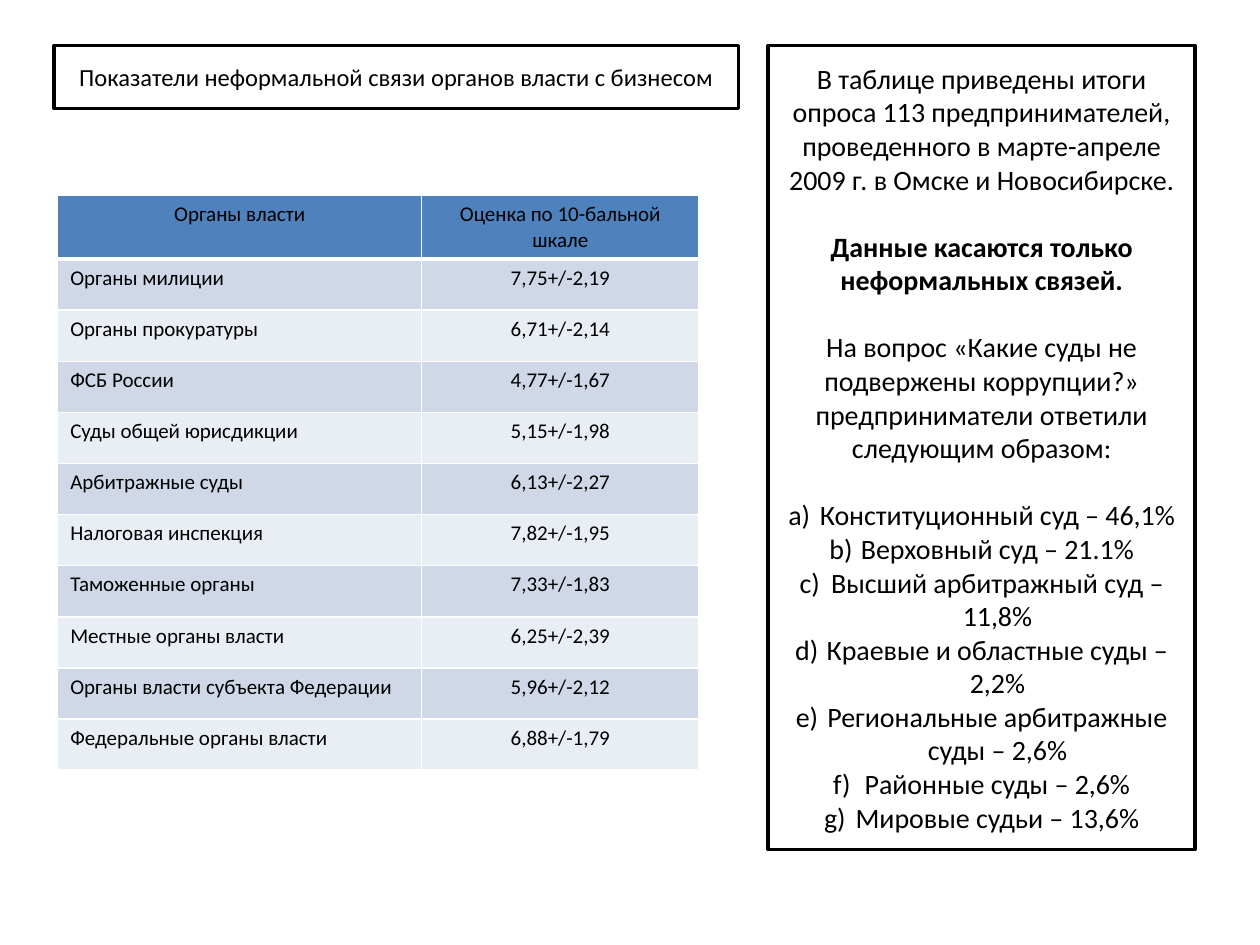
from dataclasses import dataclass

from lxml.etree import SubElement
from pptx import Presentation
from pptx.dml.color import RGBColor
from pptx.enum.shapes import MSO_SHAPE
from pptx.enum.text import MSO_ANCHOR, PP_ALIGN
from pptx.oxml.ns import qn
from pptx.util import Pt


@dataclass(frozen=True)
class Theme:
    font: str = "Calibri"
    ink: str = "000000"
    paper: str = "FFFFFF"
    head: str = "4F81BD"
    bands: tuple = ("D0D8E8", "E9EDF4")
    title: int = 14
    body: int = 16
    cell: int = 12
    edge: int = 2


HEAD = ("Органы власти", "Оценка по 10-бальной шкале")
SCORES = [
    ("Органы милиции", "7,75+/-2,19"),
    ("Органы прокуратуры", "6,71+/-2,14"),
    ("ФСБ России", "4,77+/-1,67"),
    ("Суды общей юрисдикции", "5,15+/-1,98"),
    ("Арбитражные суды", "6,13+/-2,27"),
    ("Налоговая инспекция", "7,82+/-1,95"),
    ("Таможенные органы", "7,33+/-1,83"),
    ("Местные органы власти", "6,25+/-2,39"),
    ("Органы власти субъекта Федерации", "5,96+/-2,12"),
    ("Федеральные органы власти", "6,88+/-1,79"),
]
SURVEY = (
    "В таблице приведены итоги опроса 113 предпринимателей, "
    "проведенного в марте-апреле 2009 г. в Омске и Новосибирске."
)
SCOPE = "Данные касаются только неформальных связей."
QUERY = (
    "На вопрос «Какие суды не подвержены коррупции?» "
    "предприниматели ответили следующим образом:"
)
COURTS = [
    "Конституционный суд – 46,1%",
    "Верховный суд – 21.1%",
    "Высший арбитражный суд – 11,8%",
    "Краевые и областные суды – 2,2%",
    "Региональные арбитражные суды – 2,6%",
    "Районные суды – 2,6%",
    "Мировые судьи – 13,6%",
]


def color(code):
    return RGBColor.from_string(code)


def write(para, text, *, theme, size, bold=False, align=PP_ALIGN.CENTER,
          before=0, letter=False):
    """Fill a paragraph; letter=True numbers it a), b), c)."""
    para.alignment = align
    para.space_before = Pt(before)
    run = para.add_run()
    run.text = text
    font = run.font
    font.name, font.size, font.bold = theme.font, Pt(size), bold
    font.color.rgb = color(theme.ink)
    if letter:
        props = para._p.get_or_add_pPr()
        props.set("marL", str(Pt(18)))
        props.set("indent", str(-Pt(18)))
        SubElement(props, qn("a:buFont"), typeface="+mj-lt")
        SubElement(props, qn("a:buAutoNum"), type="alphaLcParenR")


def rule(cell, code, base):
    """Draw the four borders of a cell; call before filling it."""
    props = cell._tc.get_or_add_tcPr()
    for side, width in (("L", 1), ("R", 1), ("T", 1), ("B", base)):
        line = SubElement(props, qn(f"a:ln{side}"), w=str(Pt(width)))
        fill = SubElement(line, qn("a:solidFill"))
        SubElement(fill, qn("a:srgbClr"), val=code)


class Page:
    def __init__(self, slide, theme):
        self.slide, self.theme = slide, theme

    def box(self, left, top, width, height, paras):
        """Add a framed box; paras holds (text, format) pairs."""
        shape = self.slide.shapes.add_shape(
            MSO_SHAPE.RECTANGLE, Pt(left), Pt(top), Pt(width), Pt(height))
        shape.shadow.inherit = False
        shape.fill.solid()
        shape.fill.fore_color.rgb = color(self.theme.paper)
        shape.line.color.rgb = color(self.theme.ink)
        shape.line.width = Pt(self.theme.edge)
        frame = shape.text_frame
        frame.word_wrap = True
        frame.vertical_anchor = MSO_ANCHOR.MIDDLE
        for i, (text, style) in enumerate(paras):
            para = frame.add_paragraph() if i else frame.paragraphs[0]
            write(para, text, theme=self.theme, **style)

    def table(self, left, top, widths, heights, rows):
        grid = self.slide.shapes.add_table(
            len(rows), len(widths), Pt(left), Pt(top),
            Pt(sum(widths)), Pt(sum(heights))).table
        for col, width in zip(grid.columns, widths):
            col.width = Pt(width)
        for r, row in enumerate(rows):
            grid.rows[r].height = Pt(heights[r])
            shade = self.theme.bands[(r - 1) % 2] if r else self.theme.head
            for c, text in enumerate(row):
                cell = grid.cell(r, c)
                rule(cell, self.theme.paper, base=1 if r else 3)
                cell.fill.solid()
                cell.fill.fore_color.rgb = color(shade)
                align = PP_ALIGN.LEFT if r and not c else PP_ALIGN.CENTER
                write(cell.text_frame.paragraphs[0], text, theme=self.theme,
                      size=self.theme.cell, align=align)


def main():
    deck = Presentation()
    deck.slide_width, deck.slide_height = Pt(720), Pt(540)
    theme = Theme()
    page = Page(deck.slides.add_slide(deck.slide_layouts[6]), theme)

    title = "Показатели неформальной связи органов власти с бизнесом"
    page.box(31, 26, 391, 36, [(title, dict(size=theme.title))])

    heights = [36.4] + [29.2] * len(SCORES)
    page.table(33, 111.6, (208, 158.5), heights, [HEAD, *SCORES])

    plain = dict(size=theme.body)
    apart = dict(plain, before=19.2)
    notes = [(SURVEY, plain), (SCOPE, dict(apart, bold=True)), (QUERY, apart)]
    for i, court in enumerate(COURTS):
        notes.append((court, dict(plain if i else apart, letter=True)))
    page.box(439, 26, 244, 459.5, notes)

    deck.save("out.pptx")


if __name__ == "__main__":
    main()
